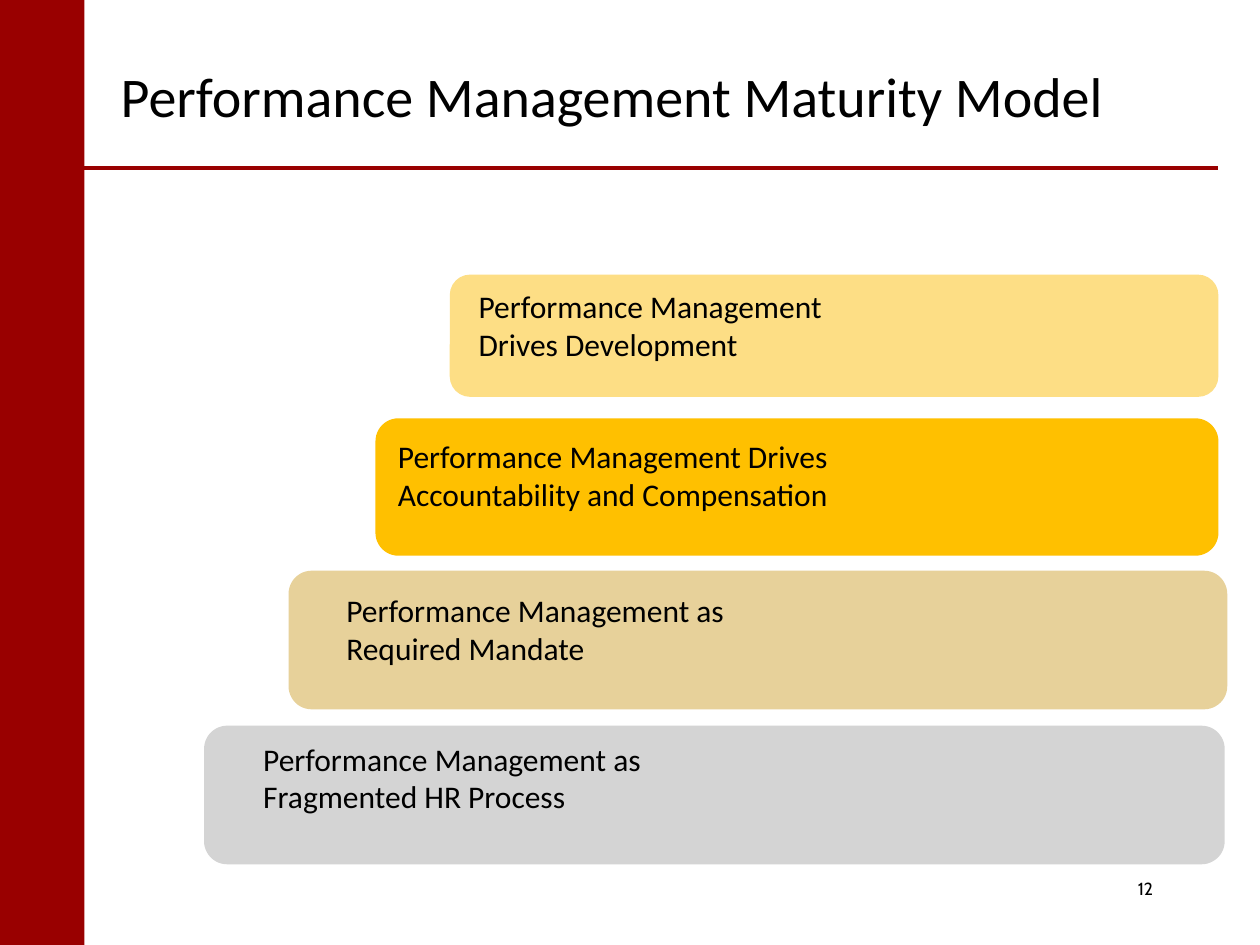
"""Build the performance management maturity slide."""
from dataclasses import dataclass
from typing import Any

from lxml import etree
from pptx import Presentation
from pptx.dml.color import RGBColor
from pptx.enum import shapes, text
from pptx.oxml.ns import qn
from pptx.util import Inches, Pt


@dataclass(frozen=True)
class Theme:
    red: str = "990000"
    ink: str = "000000"
    head: int = 32
    body: int = 18
    small: int = 10
    font: str = "Calibri"
    page: str = "Cabin"


@dataclass(frozen=True)
class Box:
    left: float
    top: float
    width: float
    height: float

    def emu(self) -> tuple:
        return tuple(map(Inches, (self.left, self.top, self.width, self.height)))


@dataclass(frozen=True)
class Level:
    words: str
    fill: str
    bar: Box
    label: Box


THEME = Theme()
LEVELS = (
    Level("Performance Management\vDrives Development", "FDDE85",
          Box(3.57, 2.18, 6.1, 0.97), Box(3.7, 2.23, 6.43, 0.71)),
    Level("Performance Management Drives\vAccountability and Compensation", "FFC000",
          Box(2.98, 3.32, 6.69, 1.09), Box(3.06, 3.42, 7.46, 0.71)),
    Level("Performance Management as\vRequired Mandate", "E7D19A",
          Box(2.29, 4.53, 7.45, 1.1), Box(2.65, 4.64, 6.81, 0.71)),
    Level("Performance Management as\vFragmented HR Process", "D4D4D4",
          Box(1.62, 5.76, 8.1, 1.1), Box(1.99, 5.82, 6.81, 0.71)),
)


def write(frame: Any, words: str, size: int, align: Any, font: str = THEME.font) -> None:
    """Put one styled paragraph in a text frame."""
    frame.word_wrap = True
    para = frame.paragraphs[0]
    para.text = words
    para.alignment = align
    para.font.name = font
    para.font.size = Pt(size)
    para.font.color.rgb = RGBColor.from_string(THEME.ink)


def block(slide: Any, kind: Any, box: Box, fill: str) -> Any:
    """Draw a flat filled shape."""
    shape = slide.shapes.add_shape(kind, *box.emu())
    shape.shadow.inherit = False
    shape.fill.solid()
    shape.fill.fore_color.rgb = RGBColor.from_string(fill)
    shape.line.fill.background()
    return shape


def rule(slide: Any, left: float, right: float, top: float) -> None:
    """Draw the line under the title."""
    line = slide.shapes.add_connector(
        shapes.MSO_CONNECTOR.STRAIGHT, *map(Inches, (left, top, right, top)))
    line.line.color.rgb = RGBColor.from_string(THEME.red)
    line.line.width = Pt(2.25)
    etree.SubElement(line._element.spPr, qn("a:effectLst"))


def label(slide: Any, box: Box, words: str, size: int, align: Any,
          font: str = THEME.font) -> None:
    """Add a text box."""
    area = slide.shapes.add_textbox(*box.emu())
    write(area.text_frame, words, size, align, font)


def main() -> None:
    """Build and save the slide."""
    deck = Presentation()
    deck.slide_width, deck.slide_height = Inches(10), Inches(7.5)
    slide = deck.slides.add_slide(deck.slide_layouts[5])

    title = slide.shapes.title
    title.left, title.top, title.width, title.height = Box(0.75, 0.17, 8.22, 1.17).emu()
    title.text_frame.vertical_anchor = text.MSO_ANCHOR.MIDDLE
    write(title.text_frame, "Performance Management Maturity Model",
          THEME.head, text.PP_ALIGN.CENTER)

    block(slide, shapes.MSO_SHAPE.RECTANGLE, Box(0, 0, 0.67, 7.5), THEME.red)
    rule(slide, 0.67, 9.67, 1.33)
    for level in LEVELS:
        block(slide, shapes.MSO_SHAPE.ROUNDED_RECTANGLE, level.bar, level.fill)
        label(slide, level.label, level.words, THEME.body, text.PP_ALIGN.LEFT)
    label(slide, Box(7.92, 6.92, 1.33, 0.42), "12", THEME.small,
          text.PP_ALIGN.RIGHT, THEME.page)
    deck.save("out.pptx")


if __name__ == "__main__":
    main()
